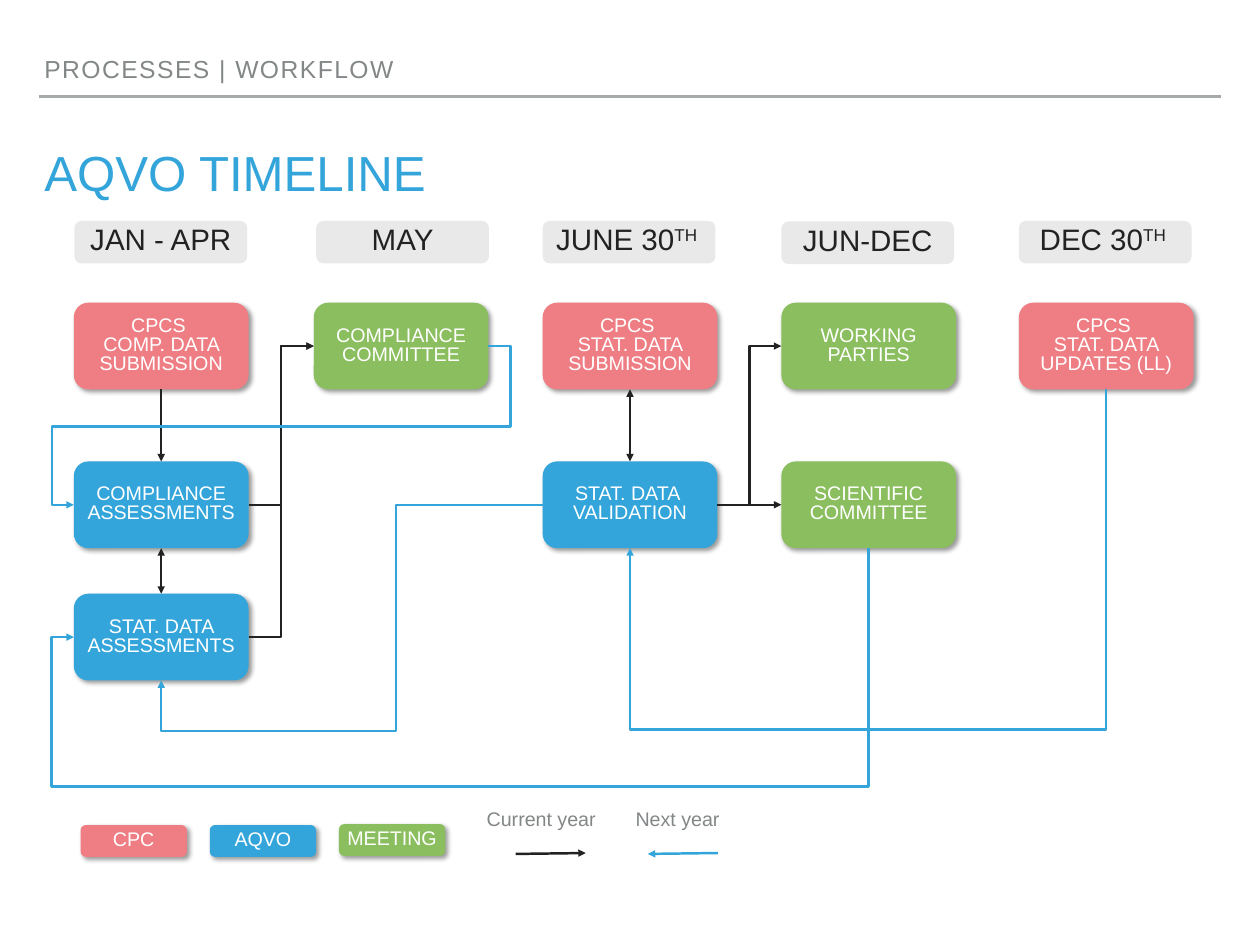
from lxml import etree
from pptx import Presentation
from pptx.dml.color import RGBColor
from pptx.enum import shapes, text
from pptx.oxml import ns
from pptx.util import Pt

BLUE, GREEN, RED = "34A5DA", "8ABE5E", "EF7E84"
BLACK, GREY, PALE, WHITE, RULE = "222222", "838787", "E9E9E9", "FFFFFF", "A6AAA9"
TOP, LEFT, BOTTOM, RIGHT = range(4)

# Content: columns, rows and sizes in points
COLUMNS = [60, 255, 441, 635, 828]
ROWS = [246, 375, 482.5]
NODE_SIZE = (142, 70.5)
HEADER_SIZE = (140.4, 34.6)
LEGEND_SIZE = (86.4, 25.9)

HEADERS = [  # left, top, text, superscript
    (60.5, 179.5, "JAN - APR", ""),
    (257, 179.5, "MAY", ""),
    (441, 179.5, "JUNE 30", "TH "),
    (635, 180, "JUN-DEC", ""),
    (828, 179.5, "DEC 30", "TH "),
]
NODES = {  # column, row, fill, paragraphs
    "comp data": (0, 0, RED, ["CPCS ", "COMP. DATA SUBMISSION"]),
    "comp assess": (0, 1, BLUE, ["COMPLIANCE ASSESSMENTS"]),
    "stat assess": (0, 2, BLUE, ["STAT. DATA ASSESSMENTS"]),
    "comp committee": (1, 0, GREEN, ["COMPLIANCE COMMITTEE"]),
    "stat data": (2, 0, RED, ["CPCS ", "STAT. DATA SUBMISSION"]),
    "validation": (2, 1, BLUE, ["STAT. DATA ", "VALIDATION"]),
    "working parties": (3, 0, GREEN, ["WORKING", "PARTIES"]),
    "sci committee": (3, 1, GREEN, ["SCIENTIFIC COMMITTEE"]),
    "updates": (4, 0, RED, ["CPCS ", "STAT. DATA UPDATES (LL)"]),
}
STRAIGHT_ARROWS = [  # from, side, to, side, arrowhead at both ends
    ("comp data", BOTTOM, "comp assess", TOP, False),
    ("comp assess", BOTTOM, "stat assess", TOP, True),
    ("stat data", BOTTOM, "validation", TOP, True),
    ("validation", RIGHT, "sci committee", LEFT, False),
]
BENT_ARROWS = [  # from, side, to, side, colour, rotation, x or y of each turn
    ("comp assess", RIGHT, "comp committee", LEFT, BLACK, 0, [228.5]),
    ("stat assess", RIGHT, "comp committee", LEFT, BLACK, 0, [228.5]),
    ("validation", RIGHT, "working parties", LEFT, BLACK, 0, [609]),
    ("validation", LEFT, "stat assess", BOTTOM, BLUE, 180, [321.5, 594]),
    ("updates", BOTTOM, "validation", BOTTOM, BLUE, 90, [593]),
    ("sci committee", BOTTOM, "stat assess", LEFT, BLUE, 90, [639, 42]),
    ("comp committee", RIGHT, "comp assess", LEFT, BLUE, 0, [415, 346.5, 42]),
]
LEGEND = [(65.5, 670.5, "CPC", RED), (170.5, 670.5, "AQVO", BLUE),
          (275.5, 669.75, "MEETING", GREEN)]
YEARS = [  # label left, label width, line left, line right, text, colour, points left
    (391.5, 98, 419, 476, "Current year", BLACK, False),
    (512.5, 77, 526.5, 583.5, "Next year", BLUE, True),
]

presentation = Presentation()
presentation.slide_width, presentation.slide_height = Pt(1024), Pt(768)
slide = presentation.slides.add_slide(presentation.slide_layouts[6])


def rgb(value):
    return RGBColor.from_string(value)


def add_xml(parent, tag, **attributes):
    child = etree.SubElement(parent, ns.qn(tag))
    for name, value in attributes.items():
        child.set(name, str(value))
    return child


def write(shape, words, size, colour, align=text.PP_ALIGN.CENTER,
          anchor=text.MSO_ANCHOR.MIDDLE, spacing=0.8, wrap=True, superscript=""):
    frame = shape.text_frame
    frame.text = "\n".join(words)
    frame.word_wrap, frame.vertical_anchor = wrap, anchor
    frame.margin_left = frame.margin_right = Pt(4)
    frame.margin_top = frame.margin_bottom = Pt(4)
    if superscript:
        raised = frame.paragraphs[-1].add_run()
        raised.text = superscript
        raised.font._element.set("baseline", "30000")
    for paragraph in frame.paragraphs:
        paragraph.alignment, paragraph.line_spacing = align, spacing
        for run in paragraph.runs:
            run.font.name, run.font.size = "Arial", Pt(size)
            run.font.color.rgb = rgb(colour)


def add_label(left, top, width, height, words, size, colour, **options):
    box = slide.shapes.add_textbox(Pt(left), Pt(top), Pt(width), Pt(height))
    write(box, [words], size, colour, align=text.PP_ALIGN.LEFT, **options)
    return box


def add_box(left, top, box_size, fill, shadow=True):
    box = slide.shapes.add_shape(shapes.MSO_SHAPE.ROUNDED_RECTANGLE,
                                 Pt(left), Pt(top), *map(Pt, box_size))
    box.fill.solid()
    box.fill.fore_color.rgb = rgb(fill)
    box.line.fill.background()
    box.shadow.inherit = False
    if shadow:
        effects = box._element.spPr.find(ns.qn("a:effectLst"))
        outer = add_xml(effects, "a:outerShdw", blurRad=Pt(4), dist=Pt(3),
                        dir=45 * 60000, rotWithShape=0)
        add_xml(add_xml(outer, "a:srgbClr", val="000000"), "a:alpha", val=40000)
    return box


def add_line(kind, colour, ends=(0, 0, 0, 0), head=False, tail=False):
    line = slide.shapes.add_connector(kind, *map(Pt, ends))
    line.line.color.rgb = rgb(colour)
    line.line.width = Pt(2)
    properties = line._element.spPr
    outline = properties.find(ns.qn("a:ln"))
    for tag, wanted in (("a:headEnd", head), ("a:tailEnd", tail)):
        if wanted:
            add_xml(outline, tag, type="triangle")
    add_xml(properties, "a:effectLst")
    return line


def side_point(box, side):
    across, down = [(0.5, 0), (0, 0.5), (0.5, 1), (1, 0.5)][side]
    return box.left + box.width * across, box.top + box.height * down


def bend(line, start, end, rotation, turns):
    """Place an elbow connector so that its legs turn at the given x or y values."""
    dx, dy = end[0] - start[0], end[1] - start[1]
    along, across = {0: (dx, dy), 90: (dy, -dx), 180: (-dx, -dy)}[rotation]
    line.width, line.height = int(abs(along)), int(abs(across))
    line.left = int((start[0] + end[0] - abs(along)) / 2)
    line.top = int((start[1] + end[1] - abs(across)) / 2)
    properties = line._element.spPr
    frame = properties.find(ns.qn("a:xfrm"))
    frame.set("rot", str(rotation * 60000))
    frame.set("flipH", str(int(along < 0)))
    frame.set("flipV", str(int(across < 0)))
    geometry = properties.find(ns.qn("a:prstGeom"))
    geometry.set("prst", f"bentConnector{len(turns) + 2}")
    guides = geometry.find(ns.qn("a:avLst"))
    if guides is None:
        guides = add_xml(geometry, "a:avLst")
    first_axis = 1 if rotation == 90 else 0
    for index, turn in enumerate(turns):
        axis = (first_axis + index) % 2
        share = (Pt(turn) - start[axis]) / (end[axis] - start[axis])
        add_xml(guides, "a:gd", name=f"adj{index + 1}",
                fmla=f"val {round(share * 100000)}")


# Heading, rule and title
STRAIGHT, ELBOW = shapes.MSO_CONNECTOR.STRAIGHT, shapes.MSO_CONNECTOR.ELBOW
add_line(STRAIGHT, RULE, (32, 78.5, 992, 78.5))
heading = add_label(32, 44.5, 880, 27.5, "PROCESSES | WORKFLOW", 20, GREY,
                    anchor=text.MSO_ANCHOR.BOTTOM)
heading.text_frame.paragraphs[0].runs[0].font._element.set("spc", "120")
title = add_label(32, 121, 960, 57, "AQVO TIMELINE", 40, BLUE, anchor=text.MSO_ANCHOR.TOP)
title.text_frame.paragraphs[0].space_before = Pt(22)

# Period headers and process boxes
for left, top, words, superscript in HEADERS:
    write(add_box(left, top, HEADER_SIZE, PALE, shadow=False), [words], 24, BLACK,
          superscript=superscript)
boxes = {}
for name, (column, row, fill, words) in NODES.items():
    boxes[name] = add_box(COLUMNS[column], ROWS[row], NODE_SIZE, fill)
    write(boxes[name], words, 16, WHITE)

# Arrows between boxes
for source, out_side, target, in_side, both in STRAIGHT_ARROWS:
    arrow = add_line(STRAIGHT, BLACK, head=both, tail=True)
    arrow.begin_connect(boxes[source], out_side)
    arrow.end_connect(boxes[target], in_side)
for source, out_side, target, in_side, colour, rotation, turns in BENT_ARROWS:
    arrow = add_line(ELBOW, colour, tail=True)
    arrow.begin_connect(boxes[source], out_side)
    arrow.end_connect(boxes[target], in_side)
    bend(arrow, side_point(boxes[source], out_side), side_point(boxes[target], in_side),
         rotation, turns)

# Legend
for left, top, words, fill in LEGEND:
    write(add_box(left, top, LEGEND_SIZE, fill), [words], 16, WHITE)
for left, width, line_left, line_right, words, colour, backward in YEARS:
    add_line(STRAIGHT, colour, (line_left, 694, line_right, 693.25),
             head=backward, tail=not backward)
    label = add_label(left, 639, width, 52, words, 16, GREY, spacing=1.0, wrap=False)
    label.text_frame.paragraphs[0].space_before = Pt(24)

presentation.save("out.pptx")
